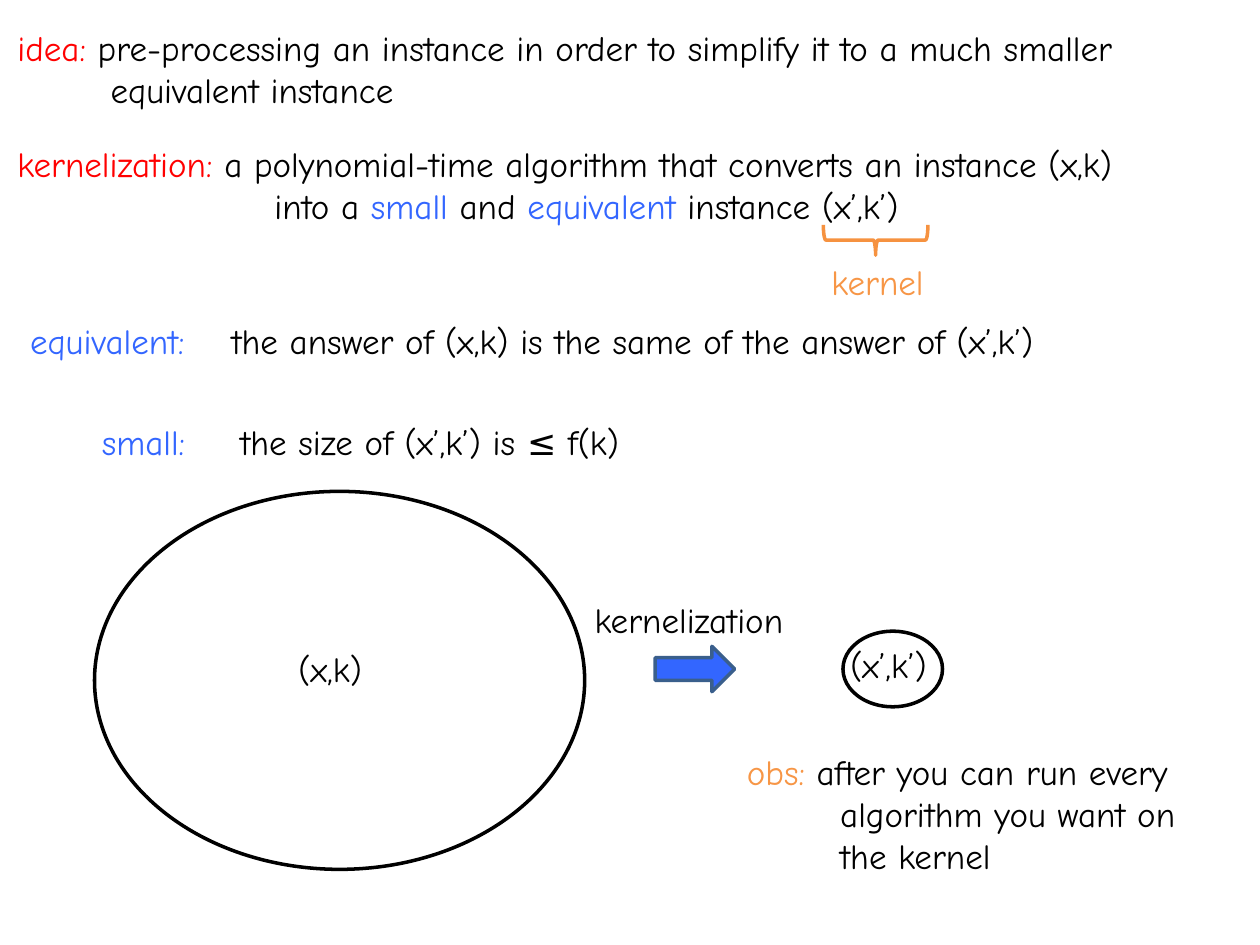
from dataclasses import dataclass
from typing import Optional

from pptx import Presentation
from pptx.dml.color import RGBColor
from pptx.enum.shapes import MSO_SHAPE as Preset
from pptx.enum.text import MSO_AUTO_SIZE as AutoSize
from pptx.util import Inches, Pt

RED = RGBColor(0xFF, 0x00, 0x00)
BLUE = RGBColor(0x33, 0x66, 0xFF)
BLACK = RGBColor(0x00, 0x00, 0x00)
ORANGE = RGBColor(0xF7, 0x96, 0x46)
BRACE_ORANGE = RGBColor(0xF6, 0x92, 0x40)
ARROW_EDGE = RGBColor(0x3A, 0x5F, 0x8C)

COLUMNS, ROWS = 100, 75
WIDTH, HEIGHT = Inches(10), Inches(7.5)
FRAME_FORMAT = {"word_wrap": True, "auto_size": AutoSize.SHAPE_TO_FIT_TEXT}
FONT_FORMAT = {"name": "Comic Neue", "size": Pt(20)}
LINE_ROWS, DEFINITION_HANG, KERNELIZATION_HANG = 4.4, 7.4, 20.4


@dataclass(frozen=True)
class Area:
    column: float
    row: float
    columns: float
    rows: float = LINE_ROWS


@dataclass(frozen=True)
class Passage:
    area: Area
    pieces: tuple[tuple[str, RGBColor], ...]
    hang: float = 0


@dataclass(frozen=True)
class Figure:
    preset: Preset
    area: Area
    edge: RGBColor
    fill: Optional[RGBColor] = None
    rotation: float = 0


def across(columns: float) -> int:
    return round(WIDTH * columns / COLUMNS)


def down(rows: float) -> int:
    return round(HEIGHT * rows / ROWS)


def bounds(area: Area) -> tuple[int, int, int, int]:
    return (across(area.column), down(area.row),
            across(area.columns), down(area.rows))


def apply_format(target: object, values: dict) -> None:
    for attribute, value in values.items():
        setattr(target, attribute, value)


def draw_passage(slide, passage: Passage) -> None:
    frame = slide.shapes.add_textbox(*bounds(passage.area)).text_frame
    apply_format(frame, FRAME_FORMAT)
    paragraph = frame.paragraphs[0]
    if passage.hang:
        indent = across(passage.hang)
        properties = paragraph._p.get_or_add_pPr()
        properties.set("marL", str(indent))
        properties.set("indent", str(-indent))
    for wording, color in passage.pieces:
        for number, line in enumerate(wording.split("\n")):
            if number:
                paragraph.add_line_break()
            run = paragraph.add_run()
            run.text = line
            apply_format(run.font, FONT_FORMAT)
            run.font.color.rgb = color
    apply_format(paragraph.font, FONT_FORMAT)


def draw_figure(slide, figure: Figure) -> None:
    shape = slide.shapes.add_shape(figure.preset, *bounds(figure.area))
    shape.shadow.inherit = False
    shape.rotation = figure.rotation
    if figure.fill is None:
        shape.fill.background()
    else:
        shape.fill.solid()
        shape.fill.fore_color.rgb = figure.fill
    shape.line.color.rgb = figure.edge
    shape.line.width = Pt(2)


FIGURES = (
    Figure(Preset.RIGHT_ARROW, Area(52, 51.3, 6.3, 3.6), ARROW_EDGE, BLUE),
    Figure(Preset.LEFT_BRACE, Area(68.3, 14.9, 2.4, 8.3), BRACE_ORANGE,
           rotation=270),
    Figure(Preset.OVAL, Area(7.5, 39, 38.9, 30), BLACK),
    Figure(Preset.OVAL, Area(66.9, 50.1, 7.9, 6), BLACK),
)

PASSAGES = (
    Passage(Area(0.4, 1.6, 99.3, 7.7), (
        ("idea: ", RED),
        ("pre-processing an instance in order to simplify it to a much "
         "smaller\nequivalent instance", BLACK),
    ), DEFINITION_HANG),
    Passage(Area(0.4, 10.8, 99.3, 7.7), (
        ("kernelization: ", RED),
        ("a polynomial-time algorithm that converts an instance (x,k)\n"
         "into a ", BLACK),
        ("small", BLUE),
        (" and ", BLACK),
        ("equivalent", BLUE),
        (" instance (x’,k’)", BLACK),
    ), KERNELIZATION_HANG),
    Passage(Area(65, 20.2, 10.2), (("kernel", ORANGE),)),
    Passage(Area(1.4, 24.9, 25.4), (("equivalent:", BLUE),)),
    Passage(Area(17.4, 24.9, 79.1), (
        ("the answer of (x,k) is the same of the answer of (x’,k’)", BLACK),
    )),
    Passage(Area(7.1, 32.9, 12), (("small:", BLUE),)),
    Passage(Area(18.1, 32.9, 58.3), (
        ("the size of (x’,k’) is ≤ f(k)", BLACK),
    )),
    Passage(Area(22.7, 50.9, 8.2), (("(x,k)", BLACK),)),
    Passage(Area(46.2, 47, 21.8), (("kernelization", BLACK),)),
    Passage(Area(66.5, 50.6, 9.9), (("(x’,k’)", BLACK),)),
    Passage(Area(58.3, 59.1, 38.9, 11.1), (
        ("obs: ", ORANGE),
        ("after you can run every\nalgorithm you want on\nthe kernel", BLACK),
    ), DEFINITION_HANG),
)


def main() -> None:
    deck = Presentation()
    apply_format(deck, {"slide_width": WIDTH, "slide_height": HEIGHT})
    slide = deck.slides.add_slide(deck.slide_layouts[6])
    for figure in FIGURES:
        draw_figure(slide, figure)
    for passage in PASSAGES:
        draw_passage(slide, passage)
    deck.save("out.pptx")


if __name__ == "__main__":
    main()
